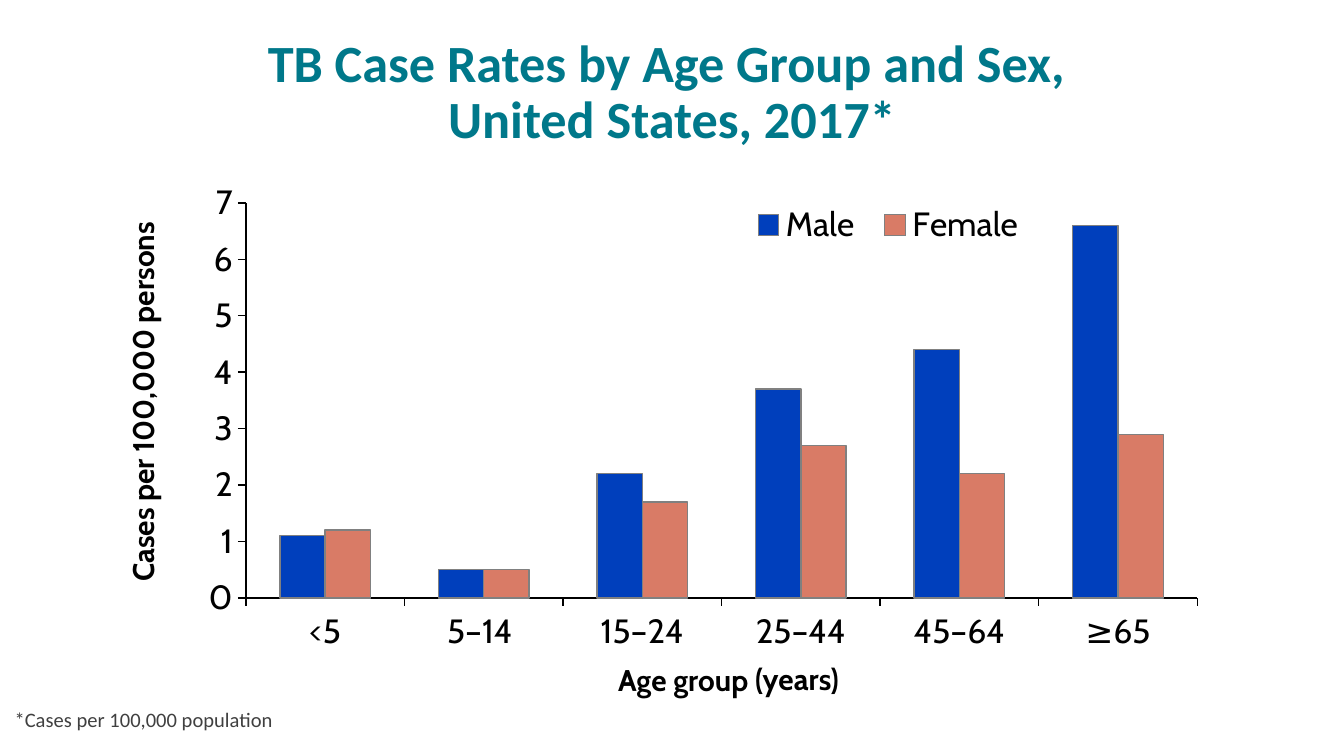
import pptx
import pptx.chart.data
import pptx.dml.color
import pptx.enum.chart
import pptx.enum.text
import pptx.oxml
import pptx.oxml.ns
import pptx.util
from pptx.util import Inches

COLORS = {
    "title": "00788A",
    "note": "404040",
    "text": "000000",
    "male": "003FBC",
    "female": "D97B66",
    "outline": "808080",
}
AGE_GROUPS = ["<5", "5–14 ", "15–24", "25–44", "45–64", "≥65"]
RATES = {
    "Male": [1.1, 0.5, 2.2, 3.7, 4.4, 6.6],
    "Female": [1.2, 0.5, 1.7, 2.7, 2.2, 2.9],
}
# Left, top, width and height on the slide, in inches
CHART_BOX = (1.4, 1.28, 7.66, 4.13)
PLOT_BOX = (1.83, 1.51, 7.08, 2.94)
LEGEND_BOX = (5.5, 1.49, 2.22, 0.37)


def rgb(name):
    return pptx.dml.color.RGBColor.from_string(COLORS[name])


def set_font(font, size, color, face, bold=False):
    font.size = pptx.util.Pt(size)
    font.color.rgb = rgb(color)
    font.name = face
    font.bold = bold


def set_line(line, color):
    line.color.rgb = rgb(color)
    line.width = pptx.util.Pt(0.75)


def add_text(slide, box, text, size, color, face, bold=False, centered=True,
             rotation=0, wrap=True):
    """Add a one-paragraph text box and return it."""
    label = slide.shapes.add_textbox(*map(Inches, box))
    label.rotation = rotation
    label.text_frame.word_wrap = wrap
    paragraph = label.text_frame.paragraphs[0]
    paragraph.text = text
    align = pptx.enum.text.PP_ALIGN
    paragraph.alignment = align.CENTER if centered else align.LEFT
    for run in paragraph.runs:
        set_font(run.font, size, color, face, bold)
    return label


def place(element, index, box, inner=False):
    """Fix the position of a chart part, given as a box on the slide."""
    left, top, width, height = CHART_BOX
    fractions = ((box[0] - left) / width, (box[1] - top) / height,
                 box[2] / width, box[3] / height)
    for old in element.findall(pptx.oxml.ns.qn("c:layout")):
        element.remove(old)
    target = '<c:layoutTarget val="inner"/>' if inner else ""
    sizes = "".join(f'<c:{tag} val="{value:.4f}"/>'
                    for tag, value in zip("xywh", fractions))
    element.insert(index, pptx.oxml.parse_xml(
        f'<c:layout {pptx.oxml.ns.nsdecls("c")}><c:manualLayout>{target}'
        f'<c:xMode val="edge"/><c:yMode val="edge"/>{sizes}'
        '</c:manualLayout></c:layout>'))


def style_axis(axis):
    axis.has_major_gridlines = False
    axis.major_tick_mark = pptx.enum.chart.XL_TICK_MARK.OUTSIDE
    axis.minor_tick_mark = pptx.enum.chart.XL_TICK_MARK.NONE
    set_line(axis.format.line, "text")
    set_font(axis.tick_labels.font, 18, "text", "Cabin")


def add_rate_chart(slide):
    data = pptx.chart.data.CategoryChartData()
    data.categories = AGE_GROUPS
    for sex, rates in RATES.items():
        data.add_series(sex, rates)
    chart = slide.shapes.add_chart(
        pptx.enum.chart.XL_CHART_TYPE.COLUMN_CLUSTERED,
        *map(Inches, CHART_BOX), data).chart
    chart.has_title = False
    set_font(chart.font, 18, "text", "Cabin")

    # Columns
    plot = chart.plots[0]
    plot.gap_width = 150
    plot.overlap = 0
    plot.vary_by_categories = False
    for series in plot.series:
        series.format.fill.solid()
        series.format.fill.fore_color.rgb = rgb(series.name.lower())
        set_line(series.format.line, "outline")

    # Axes
    style_axis(chart.category_axis)
    rate_axis = chart.value_axis
    style_axis(rate_axis)
    rate_axis.minimum_scale, rate_axis.maximum_scale = 0, 7
    rate_axis.major_unit = 1
    rate_axis.tick_labels.number_format = "#,##0"
    rate_axis.tick_labels.number_format_is_linked = False

    # Legend and plot positions
    chart.has_legend = True
    legend = chart.legend
    legend.position = pptx.enum.chart.XL_LEGEND_POSITION.BOTTOM
    legend.include_in_layout = False
    set_font(legend.font, 18, "text", "Cabin")
    place(legend._element, 1, LEGEND_BOX)
    place(chart._chartSpace.chart.plotArea, 0, PLOT_BOX, inner=True)


def main():
    deck = pptx.Presentation()
    # Widescreen, 16 to 9
    deck.slide_width = Inches(10)
    deck.slide_height = deck.slide_width * 9 // 16
    slide = deck.slides.add_slide(deck.slide_layouts[6])

    # Title
    title = add_text(slide, (0.5, 0.22, 9, 0.94),
                     "TB Case Rates by Age Group and Sex, \vUnited States, 2017*",
                     28, "title", "Calibri", bold=True)
    title.text_frame.vertical_anchor = pptx.enum.text.MSO_ANCHOR.BOTTOM
    title.text_frame.paragraphs[0].line_spacing = pptx.util.Pt(30)

    # Footnote
    add_text(slide, (0.01, 5.21, 3.75, 0.31), "*Cases per 100,000 population",
             11, "note", "Calibri", centered=False)

    # Chart with its axis titles
    add_rate_chart(slide)
    add_text(slide, (-0.88, 2.83, 3.88, 0.37), " Cases per 100,000 persons",
             16, "text", "Cabin", bold=True, rotation=270)
    add_text(slide, (4.41, 4.87, 2.02, 0.37), "Age group (years)",
             16, "text", "Cabin", bold=True, rotation=359.6, wrap=False)

    deck.save("out.pptx")


if __name__ == "__main__":
    main()
